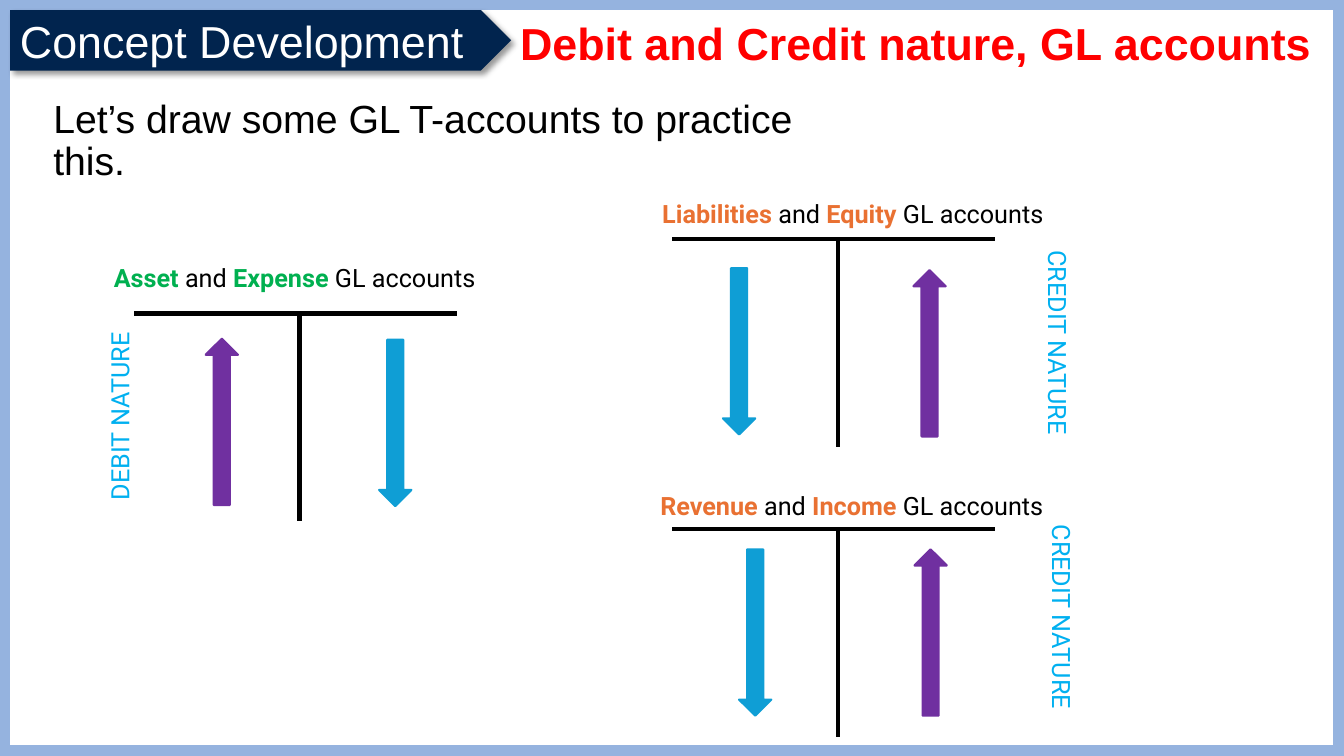
from lxml.etree import SubElement
from pptx import Presentation
from pptx.dml.color import RGBColor
from pptx.enum.shapes import MSO_CONNECTOR, MSO_SHAPE
from pptx.enum.text import MSO_ANCHOR, PP_ALIGN
from pptx.oxml.ns import qn
from pptx.util import Inches, Pt

COLORS = {
    "navy": "01244E", "frame": "95B3DF", "white": "FFFFFF", "black": "000000",
    "red": "FF0000", "green": "00B050", "orange": "E97132", "sky": "00B0F0",
    "up": "7030A0", "down": "0F9ED5",
}


class SlideBuilder:
    """Draws styled elements on the current slide."""

    def __init__(self, page):
        self.page = page

    def color(self, name):
        return RGBColor.from_string(COLORS[name])

    def shape(self, kind, left, top, width, height, fill=None, line=None, weight=1.5):
        shape = self.page.shapes.add_shape(
            kind, Inches(left), Inches(top), Inches(width), Inches(height))
        shape.shadow.inherit = False
        if fill:
            shape.fill.solid()
            shape.fill.fore_color.rgb = self.color(fill)
        else:
            shape.fill.background()
        if line:
            shape.line.color.rgb = self.color(line)
            shape.line.width = Pt(weight)
        else:
            shape.line.fill.background()
        return shape

    def drop_shadow(self, shape):
        effects = shape._element.spPr.find(qn("a:effectLst"))
        shadow = SubElement(effects, qn("a:outerShdw"), blurRad=str(Pt(4)),
                            dist=str(Pt(3)), dir="2700000", algn="tl", rotWithShape="0")
        tint = SubElement(shadow, qn("a:srgbClr"), val=COLORS["black"])
        SubElement(tint, qn("a:alpha"), val="40000")

    def add_spans(self, frame, spans, size, font):
        para = frame.paragraphs[0]
        para.font.size = Pt(size)
        para.font.name = font
        for text, color, bold in spans:
            span = para.add_run()
            span.text = text
            span.font.color.rgb = self.color(color)
            span.font.bold = bold
        return para

    def text(self, left, top, width, height, spans, size=18, font="Roboto"):
        box = self.page.shapes.add_textbox(
            Inches(left), Inches(top), Inches(width), Inches(height))
        box.text_frame.word_wrap = True
        return box, self.add_spans(box.text_frame, spans, size, font)

    def headline(self, left, top, width, height, span, size):
        para = self.text(left, top, width, height, [span], size, "Arial")[1]
        para.line_spacing = 0.9
        para.space_before = Pt(10)

    def banner(self, text):
        banner = self.shape(MSO_SHAPE.PENTAGON, 0.1, 0.1, 4.97, 0.6, "navy")
        self.drop_shadow(banner)
        banner.text_frame.vertical_anchor = MSO_ANCHOR.MIDDLE
        para = self.add_spans(banner.text_frame, [(text, "white", False)], 32, "Arial")
        para.alignment = PP_ALIGN.LEFT

    def t_account(self, left, top):
        group = self.page.shapes.add_group_shape()
        stem = left + 1.64
        for start_x, end_x, end_y in ((left, left + 3.2, top), (stem, stem, top + 2.06)):
            line = group.shapes.add_connector(
                MSO_CONNECTOR.STRAIGHT, Inches(start_x), Inches(top),
                Inches(end_x), Inches(end_y))
            line.line.color.rgb = self.color("black")
            line.line.width = Pt(3)
            SubElement(line._element.spPr, qn("a:effectLst"))

    def arrow(self, direction, left, top):
        arrow = self.shape(MSO_SHAPE.UP_ARROW, left, top, 0.32, 1.65, direction, direction)
        arrow.rotation = 180 if direction == "down" else 0

    def account_title(self, left, top, width, first, second, color):
        self.text(left, top, width, 0.4, [
            (first, color, True), (" and ", "black", False),
            (second, color, True), (" GL accounts", "black", False)])

    def nature(self, left, top, width, text, rotation):
        box, para = self.text(left, top, width, 0.4, [(text, "sky", False)])
        box.rotation = rotation
        para.alignment = PP_ALIGN.CENTER


def main():
    deck = Presentation()
    deck.slide_width, deck.slide_height = Inches(13.33), Inches(7.5)
    builder = SlideBuilder(deck.slides.add_slide(deck.slide_layouts[6]))

    builder.shape(MSO_SHAPE.RECTANGLE, 0, 0, 13.33, 7.5, line="frame", weight=15)
    builder.banner("Concept Development")
    builder.headline(0.43, 0.94, 7.59, 0.46,
                     ("Let’s draw some GL T-accounts to practice this.", "black", False), 28)

    for left, top in ((1.33, 3.11), (6.67, 2.37), (6.67, 5.25)):
        builder.t_account(left, top)
    for direction, left, top in (
            ("up", 2.04, 3.36), ("down", 3.76, 3.37),
            ("down", 7.17, 2.66), ("up", 9.06, 2.68),
            ("down", 7.33, 5.45), ("up", 9.07, 5.45)):
        builder.arrow(direction, left, top)

    builder.account_title(1.03, 2.55, 4.18, "Asset", "Expense", "green")
    builder.account_title(6.47, 1.92, 4.27, "Liabilities", "Equity", "orange")
    builder.account_title(6.45, 4.82, 4.29, "Revenue", "Income", "orange")

    builder.nature(-0.12, 3.93, 2.61, "DEBIT NATURE", 270)
    builder.nature(9.26, 3.2, 2.47, "CREDIT NATURE", 90)
    builder.nature(9.3, 5.92, 2.47, "CREDIT NATURE", 90)

    builder.headline(5.06, 0.17, 8.14, 1.15,
                     ("Debit and Credit nature, GL accounts", "red", True), 32)
    deck.save("out.pptx")


if __name__ == "__main__":
    main()
